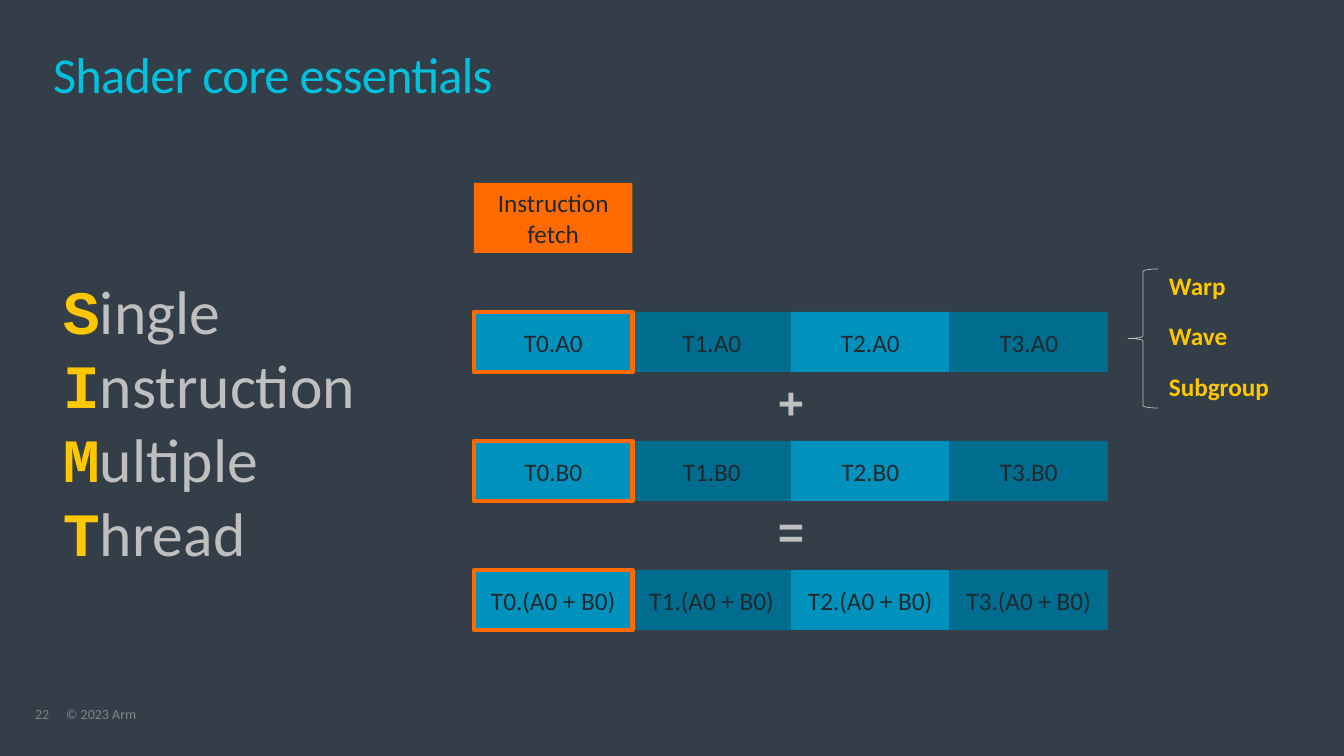
from pptx import Presentation
from pptx.dml.color import RGBColor
from pptx.enum.shapes import MSO_SHAPE
from pptx.enum.text import MSO_ANCHOR, MSO_AUTO_SIZE, PP_ALIGN
from pptx.util import Pt

WIDE, HIGH = 1344, 756
SCALE = 12192000 / WIDE

INK, GREY, GOLD, ORANGE = "21292F", "BFBFBF", "FFC700", "FF6B00"
BLUES = ["0091BD", "006D8E"]
SANS, MONO = "Calibri", "Courier New"


def px(num):
    return round(num * SCALE)


def color(code):
    return RGBColor.from_string(code)


def place(shape, box):
    shape.left, shape.top, shape.width, shape.height = map(px, box)


def add_run(para, text, size, tint, face=SANS, bold=False):
    run = para.add_run()
    run.text = text
    font = run.font
    font.size, font.name, font.bold = Pt(size), face, bold
    font.color.rgb = color(tint)
    return run


def set_frame(shape, inset=True, anchor=MSO_ANCHOR.TOP):
    frame = shape.text_frame
    frame.word_wrap = True
    frame.auto_size = MSO_AUTO_SIZE.NONE
    frame.vertical_anchor = anchor
    if not inset:
        frame.margin_left = frame.margin_right = 0
        frame.margin_top = frame.margin_bottom = 0
    return frame


def add_text(slide, box, **opts):
    return set_frame(slide.shapes.add_textbox(*map(px, box)), **opts)


def add_form(slide, kind, box, fill=None, line=None, weight=1):
    form = slide.shapes.add_shape(kind, *map(px, box))
    form.shadow.inherit = False
    if fill:
        form.fill.solid()
        form.fill.fore_color.rgb = color(fill)
    else:
        form.fill.background()
    if line:
        form.line.color.rgb = color(line)
        form.line.width = Pt(weight)
    else:
        form.line.fill.background()
    return form


def add_cell(slide, box, fill, lines):
    cell = add_form(slide, MSO_SHAPE.RECTANGLE, box, fill)
    para = set_frame(cell, anchor=MSO_ANCHOR.MIDDLE).paragraphs[0]
    para.alignment = PP_ALIGN.CENTER
    for i, line in enumerate(lines):
        if i:
            para.add_line_break()
        add_run(para, line, 18, INK)


# Heading
def add_title(slide, box):
    title = slide.shapes.title
    place(title, box)
    para = set_frame(title, inset=False).paragraphs[0]
    para.alignment = PP_ALIGN.LEFT
    para.line_spacing = 0.85
    run = add_run(para, "Shader core essentials", 36, "00C1DE")
    run.font._element.set("spc", "-50")


# Page number and copyright line
def add_footer(slide, box):
    left, top, width, height = box
    parts = [("22", 0, 34, "7F7F7F"), ("© 2023 Arm", 31, width - 31, "7D868C")]
    for text, shift, span, tint in parts:
        frame = add_text(slide, (left + shift, top, span, height), inset=False)
        para = frame.paragraphs[0]
        para.line_spacing = 0.9
        add_run(para, text, 10, tint)


# Acronym with marked initials
def add_simt(slide, box):
    para = add_text(slide, box, anchor=MSO_ANCHOR.MIDDLE).paragraphs[0]
    for i, word in enumerate(["Single", "Instruction", "Multiple", "Thread"]):
        if i:
            para.add_line_break()
        add_run(para, word[0], 44, GOLD, MONO, True)
        add_run(para, word[1:], 44, GREY)


# Fetch box above three rows of four threads
def add_lanes(slide, box):
    left, top, width, height = box
    count, tall, step = 4, 60, 129
    wide = width / count
    first = top + height - 2 * step - tall
    add_cell(slide, (left, top, wide, 70), ORANGE, ["Instruction", "fetch"])
    rows = [("A0", "+"), ("B0", "="), ("(A0 + B0)", None)]
    for r, (name, sign) in enumerate(rows):
        y = first + r * step
        for i in range(count):
            spot = (left + i * wide, y, wide, tall)
            add_cell(slide, spot, BLUES[i % 2], [f"T{i}.{name}"])
        add_form(slide, MSO_SHAPE.RECTANGLE, (left, y, wide, tall),
                 line=ORANGE, weight=3)
        if sign:
            spot = (left + (width - wide) / 2, y + tall, wide, tall)
            para = add_text(slide, spot, anchor=MSO_ANCHOR.MIDDLE).paragraphs[0]
            para.alignment = PP_ALIGN.CENTER
            add_run(para, sign, 32, GREY, MONO, True)


# Brace with the names for a thread group
def add_names(slide, box):
    left, top, width, height = box
    add_form(slide, MSO_SHAPE.LEFT_BRACE, (left, top + 4, 30, height - 3),
             line=GREY, weight=0.5)
    frame = add_text(slide, (left + 31, top, width - 31, height))
    for i, name in enumerate(["Warp", "Wave", "Subgroup"]):
        para = frame.add_paragraph() if i else frame.paragraphs[0]
        if i:
            para.space_before = Pt(14.5)
        add_run(para, name, 18, GOLD, bold=True)


def main():
    deck = Presentation()
    deck.slide_width, deck.slide_height = px(WIDE), px(HIGH)
    slide = deck.slides.add_slide(deck.slide_layouts[5])
    slide.background.fill.solid()
    slide.background.fill.fore_color.rgb = color("333E48")
    add_title(slide, (53, 52, 1238, 58))
    add_footer(slide, (35, 707, 542, 15))
    add_simt(slide, (53, 171, 328, 500))
    add_lanes(slide, (474, 183, 634, 447))
    add_names(slide, (1128, 265, 199, 142))
    deck.save("out.pptx")


if __name__ == "__main__":
    main()
